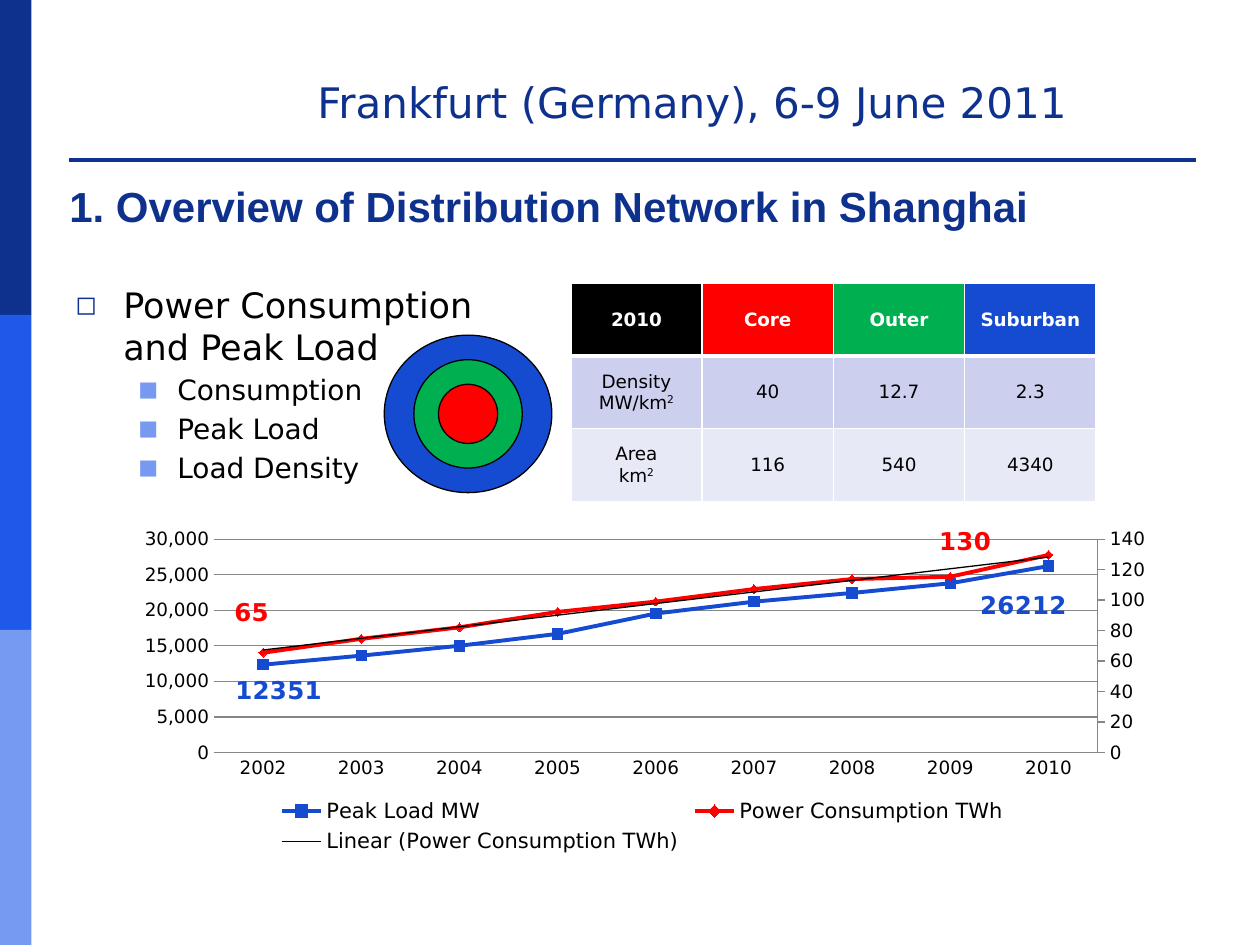
from copy import deepcopy

from pptx import Presentation
from pptx.chart.data import CategoryChartData
from pptx.dml.color import RGBColor
from pptx.enum.chart import (XL_CHART_TYPE, XL_LABEL_POSITION, XL_LEGEND_POSITION,
                             XL_MARKER_STYLE, XL_TICK_MARK)
from pptx.enum.shapes import MSO_SHAPE
from pptx.enum.text import MSO_ANCHOR, PP_ALIGN
from pptx.oxml import parse_xml
from pptx.oxml.ns import nsdecls, qn
from pptx.util import Inches, Pt

NAVY, MID_BLUE, PALE_BLUE = "0E318D", "1F59E9", "779AF1"
BLUE, GREEN, RED = "154BD1", "00B050", "FF0000"
BLACK, WHITE, GREY = "000000", "FFFFFF", "868686"
BODY_FONT = "DejaVu Sans"


def rgb(value):
    return RGBColor.from_string(value)


def set_all(target, **values):
    for name, value in values.items():
        setattr(target, name, value)


def set_font(font, size, color=BLACK, name=BODY_FONT, bold=False):
    set_all(font, size=Pt(size), name=name, bold=bold)
    font.color.rgb = rgb(color)


def set_line(line, color, width):
    line.color.rgb = rgb(color)
    line.width = Pt(width)


def set_borders(cell, color, **widths):
    """Draw cell borders; each side is L, R, T or B, in that order."""
    properties = cell._tc.get_or_add_tcPr()
    for index, (side, width) in enumerate(widths.items()):
        properties.insert(index, parse_xml(
            f'<a:ln{side} {nsdecls("a")} w="{Pt(width)}"><a:solidFill>'
            f'<a:srgbClr val="{color}"/></a:solidFill></a:ln{side}>'))


def add_plain_shape(page, kind, box, color, outline=None):
    shape = page.shapes.add_shape(kind, *map(Inches, box))
    shape.shadow.inherit = False
    shape.fill.solid()
    shape.fill.fore_color.rgb = rgb(color)
    if outline:
        set_line(shape.line, outline, 0.75)
    else:
        shape.line.fill.background()


def add_side_band(page, left, top, width, height):
    colors = (NAVY, MID_BLUE, PALE_BLUE)
    step = height / len(colors)
    for index, color in enumerate(colors):
        add_plain_shape(page, MSO_SHAPE.RECTANGLE, (left, top + index * step, width, step), color)


def add_header(page, left, top, width, height):
    """Place the conference line over a one-cell table with a bottom rule."""
    rule_height = 0.2
    rule_box = (left, top + height - rule_height, width, rule_height)
    table = page.shapes.add_table(1, 1, *map(Inches, rule_box)).table
    set_all(table, first_row=False, horz_banding=False)
    cell = table.cell(0, 0)
    set_all(cell, margin_top=0, margin_bottom=0)
    cell.fill.background()
    set_borders(cell, NAVY, B=2.25)
    cell.text_frame.paragraphs[0]._p.append(
        parse_xml(f'<a:endParaRPr {nsdecls("a")} sz="800"/>'))
    box = page.shapes.add_textbox(*map(Inches, (left + 1.88, top, 6.58, 0.5)))
    box.text_frame.word_wrap = True
    para = box.text_frame.paragraphs[0]
    para.text = "Frankfurt (Germany), 6-9 June 2011"
    set_font(para.font, 24, NAVY)


def add_title(page, left, top, width, height):
    title = page.shapes.title
    set_all(title, left=Inches(left), top=Inches(top), width=Inches(width), height=Inches(height))
    title.text_frame.vertical_anchor = MSO_ANCHOR.MIDDLE
    para = title.text_frame.paragraphs[0]
    para.text = "1. Overview of Distribution Network in Shanghai"
    para.alignment = PP_ALIGN.LEFT
    set_font(para.font, 24, NAVY, "Arial", True)


def add_bullet(para, mark, color, left, hanging):
    properties = para._p.get_or_add_pPr()
    properties.set("marL", str(Inches(left)))
    properties.set("indent", str(-Inches(hanging)))
    for element in (f'<a:buClr {nsdecls("a")}><a:srgbClr val="{color}"/></a:buClr>',
                    f'<a:buSzPct {nsdecls("a")} val="75000"/>',
                    f'<a:buFont {nsdecls("a")} typeface="{BODY_FONT}"/>',
                    f'<a:buChar {nsdecls("a")} char="{mark}"/>'):
        properties.append(parse_xml(element))


def add_topics(page, *box):
    frame = page.shapes.add_textbox(*map(Inches, box)).text_frame
    frame.word_wrap = True
    para = frame.paragraphs[0]
    para.text = "Power Consumption and Peak Load"
    add_bullet(para, "◻", NAVY, 0.38, 0.38)
    set_font(para.font, 20)
    for topic in ("Consumption", "Peak Load", "Load Density"):
        para = frame.add_paragraph()
        para.text = topic
        para.level = 1
        add_bullet(para, "■", PALE_BLUE, 0.81, 0.31)
        para.space_before = Pt(3)
        set_font(para.font, 16)


def add_zone_rings(page, left, top, width, height):
    """Draw the suburban, outer and core zones around one centre."""
    for color, ring_width, ring_height in ((BLUE, width, height), (GREEN, 0.86, 0.86),
                                           (RED, 0.47, 0.47)):
        box = (left + (width - ring_width) / 2, top + (height - ring_height) / 2,
               ring_width, ring_height)
        add_plain_shape(page, MSO_SHAPE.OVAL, box, color, BLACK)


def fill_cell(cell, text, fill, color, bold):
    """Write a cell; a ^ in the text starts a superscript."""
    cell.fill.solid()
    cell.fill.fore_color.rgb = rgb(fill)
    cell.vertical_anchor = MSO_ANCHOR.MIDDLE
    for index, line in enumerate(text.split("\n")):
        frame = cell.text_frame
        para = frame.add_paragraph() if index else frame.paragraphs[0]
        para.alignment = PP_ALIGN.CENTER
        for position, part in enumerate(line.split("^")):
            span = para.add_run()
            span.text = part
            set_font(span.font, 10.5, color, bold=bold)
            if position:
                span._r.get_or_add_rPr().set("baseline", "30000")


def add_zone_table(page, *box):
    rows = (("2010", "Core", "Outer", "Suburban"),
            ("Density\nMW/km^2", "40", "12.7", "2.3"),
            ("Area\nkm^2", "116", "540", "4340"))
    fills = ((BLACK, RED, GREEN, BLUE), ("CCD0EE",) * 4, ("E8E9F7",) * 4)
    table = page.shapes.add_table(len(rows), len(rows[0]), *map(Inches, box)).table
    for row, (texts, colors) in enumerate(zip(rows, fills)):
        head = row == 0
        for column, (text, fill) in enumerate(zip(texts, colors)):
            cell = table.cell(row, column)
            fill_cell(cell, text, fill, WHITE if head else BLACK, head)
            set_borders(cell, WHITE, L=1, R=1, T=1, B=3 if head else 1)


def set_layout(parent, index, target="", **percents):
    """Give a chart part a manual position, in percent of the chart."""
    for old in parent.findall(qn("c:layout")):
        parent.remove(old)
    modes = "".join(f'<c:{key}Mode val="edge"/>' for key in "xy" if "w" in percents)
    sizes = "".join(f'<c:{key} val="{value / 100:.3f}"/>' for key, value in percents.items())
    parent.insert(index, parse_xml(
        f'<c:layout {nsdecls("c")}><c:manualLayout>{target}{modes}{sizes}'
        '</c:manualLayout></c:layout>'))


def hide_leader_lines(series):
    labels = series._element.find(qn("c:dLbls"))
    for old in labels.findall(qn("c:showLeaderLines")):
        labels.remove(old)
    labels.append(parse_xml(f'<c:showLeaderLines {nsdecls("c")} val="0"/>'))


def format_series(series, color, marker, size, position, offsets):
    set_line(series.format.line, color, 2.25)
    series.smooth = False
    set_all(series.marker, style=marker, size=size)
    series.marker.format.fill.solid()
    series.marker.format.fill.fore_color.rgb = rgb(color)
    set_line(series.marker.format.line, color, 0.75)
    series.data_labels.show_value = False
    for point, (x, y) in offsets.items():
        label = series.points[point].data_label
        set_font(label.font, 14, color, bold=True)
        label.position = position
        element = series._element.xpath(f'c:dLbls/c:dLbl[c:idx/@val="{point}"]')[0]
        set_layout(element, 1, x=x, y=y)
    hide_leader_lines(series)


def add_trend_line(series):
    series._element.find(qn("c:cat")).addprevious(parse_xml(
        f'<c:trendline {nsdecls("c", "a")}><c:spPr><a:ln w="{Pt(0.75)}"><a:solidFill>'
        f'<a:srgbClr val="{BLACK}"/></a:solidFill></a:ln></c:spPr>'
        '<c:trendlineType val="linear"/><c:dispRSqr val="0"/><c:dispEq val="0"/></c:trendline>'))


def move_to_right_axis(chart, series):
    """Put a series in a second line plot with its own value axis, 0 to 140."""
    area = chart._chartSpace.chart.plotArea
    plot, category, value = (area.find(qn(f"c:{tag}")) for tag in ("lineChart", "catAx", "valAx"))
    new_plot, new_category, new_value = map(deepcopy, (plot, category, value))
    for old in new_plot.findall(qn("c:ser")):
        new_plot.remove(old)
    new_plot.find(qn("c:varyColors")).addnext(series._element)
    plot.addnext(new_plot)
    value.addnext(new_value)
    new_value.addnext(new_category)
    for axis_id, number in zip(new_plot.findall(qn("c:axId")), ("5001", "5002")):
        axis_id.set("val", number)
    new_value.remove(new_value.find(qn("c:majorGridlines")))
    changes = ((new_category, {"axId": "5001", "crossAx": "5002", "delete": "1"}),
               (new_value, {"axId": "5002", "crossAx": "5001", "axPos": "r", "crosses": "max",
                            "majorTickMark": "out", "majorUnit": "20"}))
    for axis, values in changes:
        for tag, setting in values.items():
            axis.find(qn(f"c:{tag}")).set("val", setting)
    new_value.find(qn("c:scaling")).find(qn("c:max")).set("val", "140")
    new_value.find(qn("c:numFmt")).set("formatCode", "General")
    new_value.replace(new_value.find(qn("c:spPr")), deepcopy(category.find(qn("c:spPr"))))


def add_load_chart(page, *box):
    data = CategoryChartData(number_format="0")
    data.categories = range(2002, 2011)
    data.add_series("Peak Load MW", (12351, 13616, 15006, 16682, 19543, 21208, 22432, 23799, 26212))
    data.add_series("Power Consumption TWh", (65.471, 74.597, 82.144, 92.265, 99.015,
                                              107.238, 113.822, 115.338, 129.587))
    chart = page.shapes.add_chart(XL_CHART_TYPE.LINE_MARKERS, *map(Inches, box), data).chart
    set_font(chart.font, 10.5)
    set_all(chart, has_title=False, has_legend=True)
    chart.plots[0].vary_by_categories = False
    for axis in (chart.category_axis, chart.value_axis):
        set_all(axis, major_tick_mark=XL_TICK_MARK.NONE, minor_tick_mark=XL_TICK_MARK.NONE)
        set_font(axis.tick_labels.font, 10.5)
    set_line(chart.category_axis.format.line, GREY, 0.75)
    axis = chart.value_axis
    if axis._element.find(qn("c:crossBetween")) is None:
        axis._element.find(qn("c:crosses")).addnext(
            parse_xml(f'<c:crossBetween {nsdecls("c")} val="between"/>'))
    set_all(axis, minimum_scale=0, maximum_scale=30000, major_unit=5000, has_major_gridlines=True)
    set_all(axis.tick_labels, number_format=r"#,##0;[Red]\-#,##0", number_format_is_linked=False)
    axis.format.line.fill.background()
    set_line(axis.major_gridlines.format.line, GREY, 0.75)
    load, consumption = chart.plots[0].series
    format_series(load, BLUE, XL_MARKER_STYLE.SQUARE, 6, XL_LABEL_POSITION.BELOW,
                  {0: (1.5, 0.4), 8: (-2.4, 4.4)})
    format_series(consumption, RED, XL_MARKER_STYLE.DIAMOND, 5, XL_LABEL_POSITION.ABOVE,
                  {0: (-1.1, -5), 8: (-8, 3)})
    add_trend_line(consumption)
    move_to_right_axis(chart, consumption)
    set_all(chart.legend, position=XL_LEGEND_POSITION.BOTTOM, include_in_layout=False)
    set_font(chart.legend.font, 12)
    set_layout(chart.legend._element, 1, x=14.3, y=80.5, w=71, h=20)
    set_layout(chart._chartSpace.chart.plotArea, 0, '<c:layoutTarget val="inner"/>',
               x=8.7, y=5.2, w=84.8, h=63.2)


def main():
    deck = Presentation()
    set_all(deck, slide_width=Inches(10), slide_height=Inches(7.5))
    page = deck.slides.add_slide(deck.slide_layouts[5])
    add_side_band(page, 0, 0, 0.25, 7.5)
    add_header(page, 0.54, 0.56, 8.96, 0.71)
    add_title(page, 0.45, 1.31, 9, 0.65)
    add_topics(page, 0.5, 2.2, 3.95, 1.75)
    add_load_chart(page, 0.98, 4.14, 8.27, 2.68)
    add_zone_table(page, 4.53, 2.25, 4.17, 1.73)
    add_zone_rings(page, 3.05, 2.66, 1.33, 1.25)
    deck.save("out.pptx")


if __name__ == "__main__":
    main()
